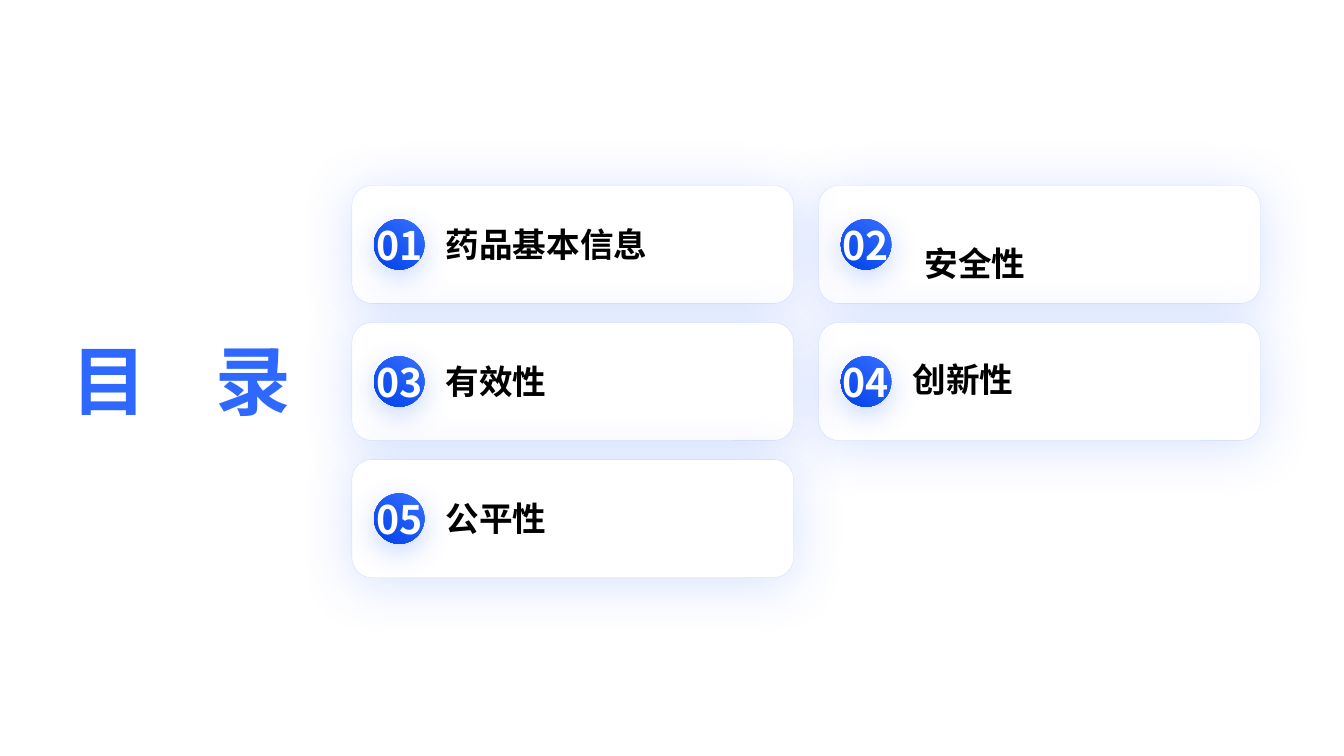
from dataclasses import dataclass

from lxml import etree
from pptx import Presentation
from pptx.dml.color import RGBColor
from pptx.enum.shapes import MSO_SHAPE
from pptx.enum.text import MSO_ANCHOR, MSO_AUTO_SIZE, PP_ALIGN
from pptx.oxml.ns import qn
from pptx.shapes.autoshape import Shape
from pptx.slide import Slide
from pptx.util import Inches, Pt

ROUNDED, OVAL = MSO_SHAPE.ROUNDED_RECTANGLE, MSO_SHAPE.OVAL
MIDDLE, BOTTOM = MSO_ANCHOR.MIDDLE, MSO_ANCHOR.BOTTOM
LEFT, CENTER = PP_ALIGN.LEFT, PP_ALIGN.CENTER
NO_FIT = MSO_AUTO_SIZE.NONE

CJK_FONT = "Noto Sans CJK SC"
BLUE, DARK_BLUE, TITLE_BLUE = "376FFF", "0041E9", "2F68FE"
WHITE, BLACK = "FFFFFF", "000000"

GRID_LEFT, GRID_TOP = 3.49, 1.84
COLUMN_STEP, ROW_STEP = 4.63, 1.36
CARD_WIDTH, CARD_HEIGHT = 4.38, 1.17
BADGE_SIZE = 0.5


@dataclass(frozen=True)
class Topic:
    number: str
    label: str
    column: int
    row: int
    nudge_x: float = 0
    nudge_y: float = 0


TOPICS = [
    Topic("02", "安全性", 1, 0, 0.12, 0.19),
    Topic("04", "创新性", 1, 1, 0, -0.02),
    Topic("01", "药品基本信息", 0, 0),
    Topic("03", "有效性", 0, 1),
    Topic("05", "公平性", 0, 2),
]


def color(value: str) -> RGBColor:
    return RGBColor.from_string(value)


def write(box: Shape, text: str, *, size: float, ink: str, font: str = CJK_FONT,
          align: PP_ALIGN = LEFT, anchor: MSO_ANCHOR = MIDDLE, wrap: bool = True,
          inset: float = 0, line_spacing: float = 1, tracking: float = 0) -> None:
    frame = box.text_frame
    frame.auto_size = NO_FIT
    frame.word_wrap = wrap
    frame.vertical_anchor = anchor
    frame.margin_left = frame.margin_right = Inches(inset)
    frame.margin_top = frame.margin_bottom = Inches(inset / 2)
    para = frame.paragraphs[0]
    para.alignment = align
    para.line_spacing = line_spacing
    span = para.add_run()
    span.text = text
    span.font.size = Pt(size)
    span.font.bold = True
    span.font.color.rgb = color(ink)
    span.font.name = font
    properties = span.font._element
    if tracking:
        properties.set("spc", str(round(tracking * 100)))
    etree.SubElement(properties, qn("a:ea"), typeface=CJK_FONT)


def set_alpha(color_element: etree._Element, percent: int) -> None:
    etree.SubElement(color_element, qn("a:alpha"), val=str(percent * 1000))


def add_glow(shape: Shape, *, alpha: int, blur: float, distance: float) -> None:
    shape.shadow.inherit = False
    effects = shape._element.spPr.find(qn("a:effectLst"))
    shadow = etree.SubElement(
        effects, qn("a:outerShdw"), blurRad=str(Pt(blur)), dist=str(Pt(distance)),
        dir=str(90 * 60000), algn="t", rotWithShape="0")
    set_alpha(etree.SubElement(shadow, qn("a:srgbClr"), val=BLUE), alpha)


def add_card(page: Slide, left: float, top: float) -> None:
    card = page.shapes.add_shape(
        ROUNDED, Inches(left), Inches(top), Inches(CARD_WIDTH), Inches(CARD_HEIGHT))
    card.fill.solid()
    card.fill.fore_color.rgb = color(WHITE)
    card.line.color.rgb = color(BLUE)
    card.line.width = Pt(0.25)
    set_alpha(card.line._ln.find(".//" + qn("a:srgbClr")), 20)
    add_glow(card, alpha=20, blur=40, distance=4)


def add_badge(page: Slide, left: float, top: float, number: str) -> None:
    badge = page.shapes.add_shape(
        OVAL, Inches(left), Inches(top), Inches(BADGE_SIZE), Inches(BADGE_SIZE))
    badge.fill.gradient()
    badge.fill.gradient_angle = 232
    for stop, shade in zip(badge.fill.gradient_stops, (BLUE, DARK_BLUE)):
        stop.color.rgb = color(shade)
    badge.line.fill.background()
    add_glow(badge, alpha=25, blur=20, distance=6)
    write(badge, number, size=28, ink=WHITE, align=CENTER, wrap=False)


def add_topic(page: Slide, topic: Topic) -> None:
    left = GRID_LEFT + topic.column * COLUMN_STEP
    top = GRID_TOP + topic.row * ROW_STEP
    add_card(page, left, top)
    add_badge(page, left + 0.22, top + (CARD_HEIGHT - BADGE_SIZE) / 2, topic.number)
    label = page.shapes.add_textbox(
        Inches(left + 0.93 + topic.nudge_x), Inches(top + 0.4 + topic.nudge_y),
        Inches(3.19), Inches(0.38))
    write(label, topic.label, size=24, ink=BLACK, anchor=BOTTOM)


def main() -> None:
    deck = Presentation()
    deck.slide_width, deck.slide_height = Inches(13.33), Inches(7.5)
    page = deck.slides.add_slide(deck.slide_layouts[5])
    title = page.shapes.title
    title.left, title.top = Inches(0.61), Inches(1.85)
    title.width, title.height = Inches(3.13), Inches(3.94)
    write(title, "目 录", size=54, ink=TITLE_BLUE, font="Calibri",
          inset=0.1, line_spacing=0.9, tracking=18.3)
    for topic in TOPICS:
        add_topic(page, topic)
    deck.save("out.pptx")


if __name__ == "__main__":
    main()
